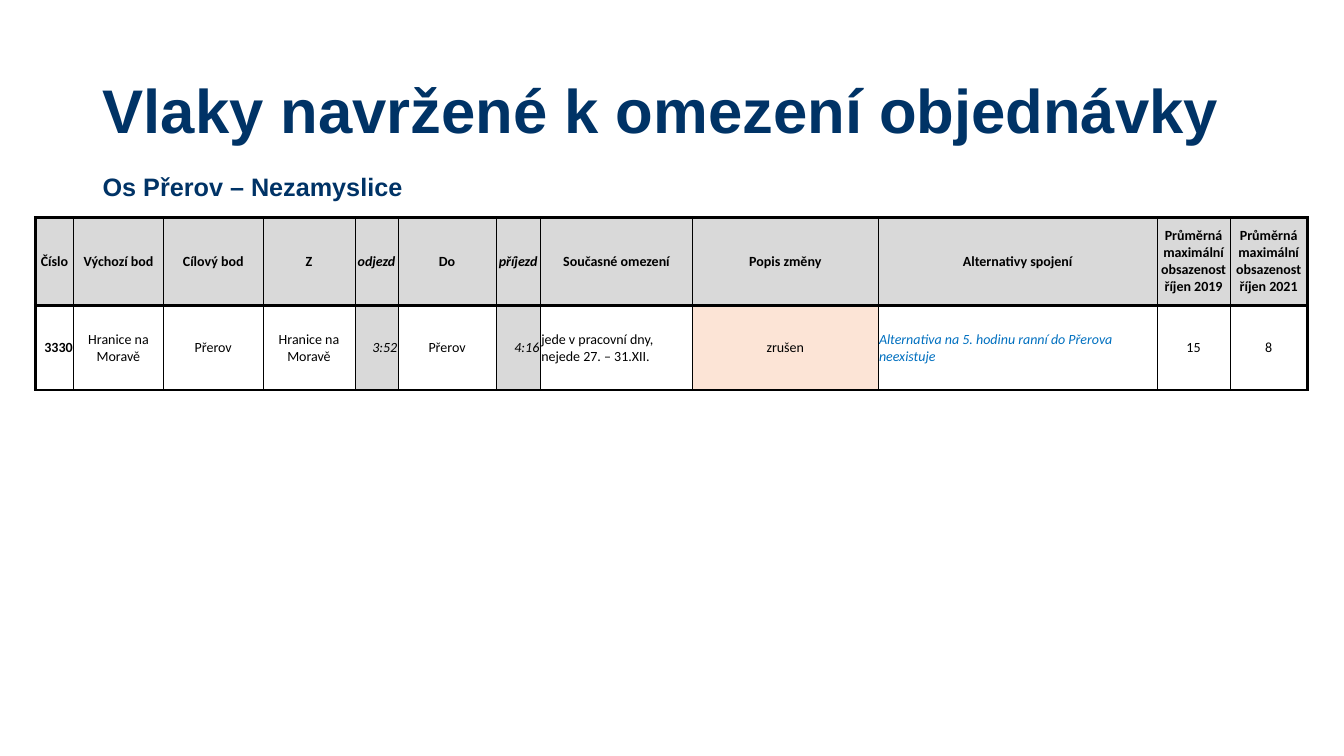
from lxml.etree import SubElement
from pptx import Presentation
from pptx.dml.color import RGBColor
from pptx.enum.text import MSO_ANCHOR as Anchor, PP_ALIGN as Align
from pptx.oxml.ns import qn
from pptx.util import Pt

PX = 9144  # EMU per px, 100 px to the inch

NAVY = RGBColor(0x00, 0x33, 0x66)
BLACK = RGBColor(0x00, 0x00, 0x00)
GRAY = RGBColor(0xD9, 0xD9, 0xD9)
PEACH = RGBColor(0xFC, 0xE4, 0xD6)
BLUE = RGBColor(0x00, 0x70, 0xC0)

THIN, THICK = Pt(0.25), Pt(2.25)

COLUMN_WIDTHS = [38, 89, 99, 91, 43, 97, 44, 151, 184, 277, 72, 77]
ROW_HEIGHTS = [87, 84]
HEADERS = [
    "Číslo", "Výchozí bod", "Cílový bod", "Z", "odjezd", "Do", "příjezd",
    "Současné omezení", "Popis změny", "Alternativy spojení",
    "Průměrná maximální obsazenost říjen 2019",
    "Průměrná maximální obsazenost říjen 2021",
]
TIME_COLUMNS = (4, 6)

# Train values, each with the format that differs from a plain centred cell
TIME = {"align": Align.RIGHT, "fill": GRAY, "italic": True}
TRAIN = [
    ("3330", {"align": Align.RIGHT, "bold": True}),
    ("Hranice na Moravě", {}),
    ("Přerov", {}),
    ("Hranice na Moravě", {}),
    ("3:52", TIME),
    ("Přerov", {}),
    ("4:16", TIME),
    ("jede v pracovní dny, nejede 27. – 31.XII.", {"align": Align.LEFT}),
    ("zrušen", {"fill": PEACH}),
    ("Alternativa na 5. hodinu ranní do Přerova neexistuje",
     {"align": Align.LEFT, "color": BLUE, "italic": True}),
    ("15", {}),
    ("8", {}),
]


def set_attributes(target, values):
    for name, value in values.items():
        setattr(target, name, value)


def write_text(frame, text, color, align=Align.LEFT, **font_format):
    paragraph = frame.paragraphs[0]
    paragraph.alignment = align
    run = paragraph.add_run()
    run.text = text
    run.font.color.rgb = color
    set_attributes(run.font, font_format)
    return paragraph


def add_heading(slide, box, text, size, anchor=Anchor.TOP):
    shape = slide.shapes.add_textbox(*(value * PX for value in box))
    set_attributes(shape.text_frame, {"word_wrap": True, "vertical_anchor": anchor})
    return write_text(shape.text_frame, text, NAVY, name="Arial", size=Pt(size), bold=True)


def set_borders(cell, widths):
    properties = cell._tc.get_or_add_tcPr()
    for position, (side, width) in enumerate(widths.items()):
        line = SubElement(properties, qn(f"a:ln{side}"), w=str(width))
        fill = SubElement(line, qn("a:solidFill"))
        SubElement(fill, qn("a:srgbClr"), val=str(BLACK))
        properties.insert(position, line)


def format_cell(cell, text, margin, align=Align.CENTER, fill=None, color=BLACK,
                bold=False, italic=False):
    set_attributes(cell, {
        "vertical_anchor": Anchor.MIDDLE,
        "margin_left": margin, "margin_right": margin,
        "margin_top": margin, "margin_bottom": 0,
    })
    if fill is None:
        cell.fill.background()
    else:
        cell.fill.solid()
        cell.fill.fore_color.rgb = fill
    write_text(cell.text_frame, text, color, align, name="Calibri", size=Pt(10),
               bold=bold, italic=italic)


def add_train_table(slide, left, top):
    frame = slide.shapes.add_table(
        len(ROW_HEIGHTS), len(COLUMN_WIDTHS), left * PX, top * PX,
        sum(COLUMN_WIDTHS) * PX, sum(ROW_HEIGHTS) * PX)
    table = frame.table
    set_attributes(table, {"first_row": False, "horz_banding": False})
    for column, width in zip(table.columns, COLUMN_WIDTHS):
        column.width = width * PX
    for row, height in zip(table.rows, ROW_HEIGHTS):
        row.height = height * PX

    # Header row and train row
    last = len(COLUMN_WIDTHS) - 1
    for index, (header, (value, value_format)) in enumerate(zip(HEADERS, TRAIN)):
        format_cell(table.cell(0, index), header, 0, fill=GRAY, bold=True,
                    italic=index in TIME_COLUMNS)
        format_cell(table.cell(1, index), value, PX, **value_format)
        for row in range(len(ROW_HEIGHTS)):
            set_borders(table.cell(row, index), {
                "L": THICK if index == 0 else THIN,
                "R": THICK if index == last else THIN,
                "T": THICK,
                "B": THICK,
            })


def main():
    presentation = Presentation()
    set_attributes(presentation, {"slide_width": 1333 * PX, "slide_height": 750 * PX})
    slide = presentation.slides.add_slide(presentation.slide_layouts[6])

    # Title and train line
    title = add_heading(slide, (92, 40, 1150, 145),
                        "Vlaky navržené k omezení objednávky", 44, Anchor.MIDDLE)
    title.line_spacing = 0.9
    add_heading(slide, (92, 165, 667, 40), "Os Přerov – Nezamyslice", 18)

    # Trains to be limited
    add_train_table(slide, 35, 216)
    presentation.save("out.pptx")


if __name__ == "__main__":
    main()
